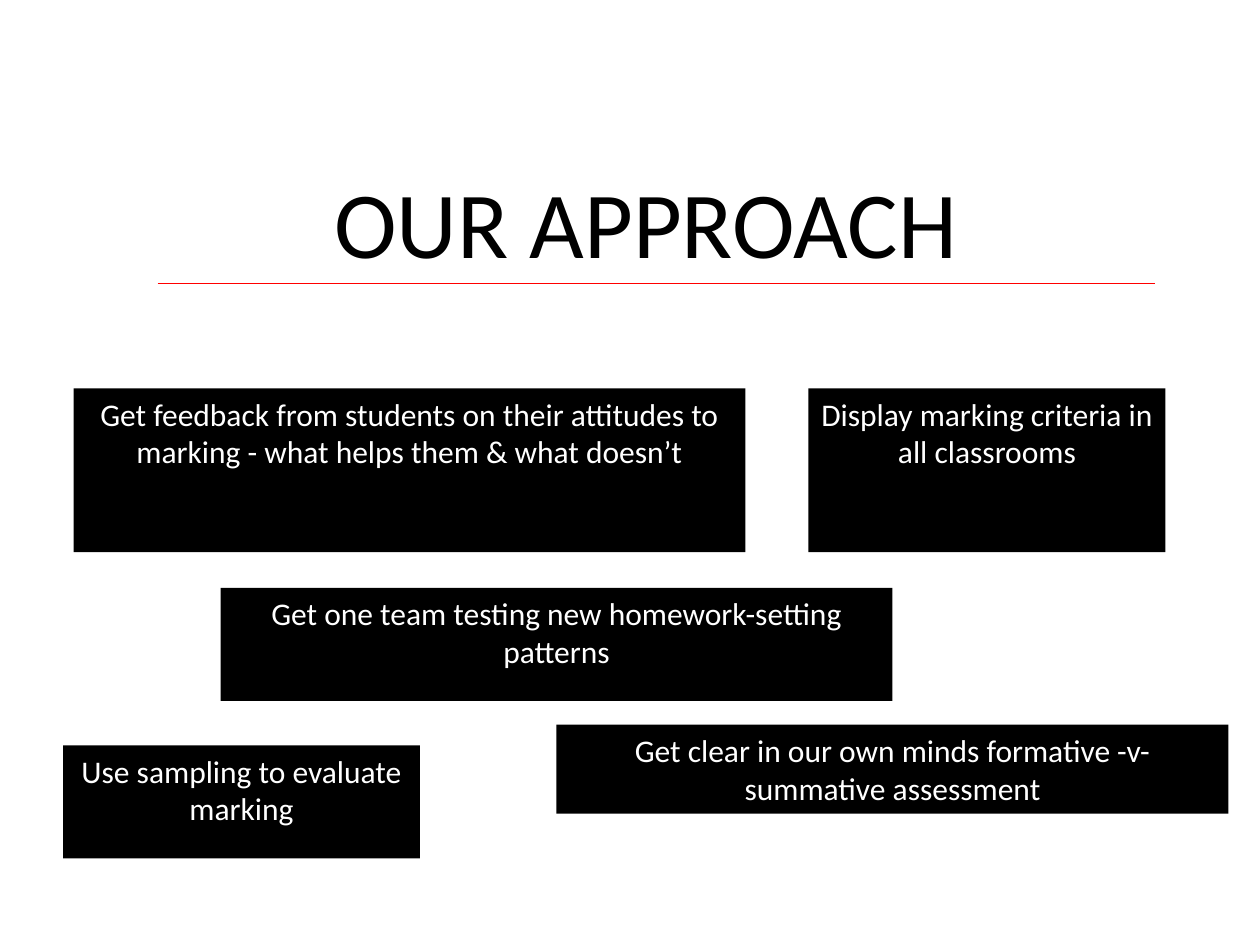
"""Build the slide on our approach to marking."""
import pptx
import pptx.dml.color
import pptx.enum.shapes
import pptx.enum.text
import pptx.oxml
import pptx.util

Pt = pptx.util.Pt
RGB = pptx.dml.color.RGBColor
BLACK = RGB(0, 0, 0)
WHITE = RGB(255, 255, 255)
RED = RGB(255, 0, 0)
WIDE, SLIM = 384, 204


def write(shape, text, size=18, color=WHITE, font="Calibri"):
    """Put centred text at the top of a shape."""
    frame = shape.text_frame
    frame.word_wrap = True
    frame.auto_size = pptx.enum.text.MSO_AUTO_SIZE.NONE
    frame.vertical_anchor = pptx.enum.text.MSO_ANCHOR.TOP
    para = frame.paragraphs[0]
    para.alignment = pptx.enum.text.PP_ALIGN.CENTER
    run = para.add_run()
    run.text = text
    run.font.name = font
    run.font.size = Pt(size)
    run.font.color.rgb = color


class Page:
    """Hold the style and the current slide."""

    def __init__(self, slide, fill=BLACK, rule=RED):
        """Keep the slide and its colours."""
        self.slide = slide
        self.fill = fill
        self.rule = rule

    def title(self, text, left, top, width, height):
        """Place and fill the title."""
        shape = self.slide.shapes.title
        shape.left, shape.top = Pt(left), Pt(top)
        shape.width, shape.height = Pt(width), Pt(height)
        write(shape, text, size=54, color=BLACK)

    def line(self, left, right, top):
        """Draw a level rule."""
        line = self.slide.shapes.add_connector(
            pptx.enum.shapes.MSO_CONNECTOR.STRAIGHT,
            Pt(left), Pt(top), Pt(right), Pt(top))
        line.line.color.rgb = self.rule
        line.line.width = Pt(0.75)
        props = line._element.spPr
        props.append(pptx.oxml.parse_xml(
            '<a:effectLst xmlns:a="http://schemas.openxmlformats.org/'
            'drawingml/2006/main"/>'))

    def box(self, text, left, top, width, height):
        """Draw a filled box with text."""
        shape = self.slide.shapes.add_shape(
            pptx.enum.shapes.MSO_SHAPE.RECTANGLE,
            Pt(left), Pt(top), Pt(width), Pt(height))
        shape.shadow.inherit = False
        shape.fill.solid()
        shape.fill.fore_color.rgb = self.fill
        shape.line.fill.background()
        write(shape, text)


def main():
    """Make the deck and save it."""
    deck = pptx.Presentation()
    deck.slide_width, deck.slide_height = Pt(720), Pt(540)
    page = Page(deck.slides.add_slide(deck.slide_layouts[5]))
    page.line(90, 660, 162)
    page.title("OUR APPROACH", 96, 90, 546, 73)
    steps = [
        ("Get feedback from students on their attitudes to marking - "
         "what helps them & what doesn’t", 42, 222, WIDE, 93.5),
        ("Get clear in our own minds formative -v- summative assessment",
         318, 414, WIDE, 51),
        ("Get one team testing new homework-setting patterns",
         126, 336, WIDE, 64.5),
        ("Display marking criteria in all classrooms",
         462, 222, SLIM, 93.5),
        ("Use sampling to evaluate marking", 36, 426, SLIM, 64.5),
    ]
    for step in steps:
        page.box(*step)
    deck.save("out.pptx")


if __name__ == "__main__":
    main()
